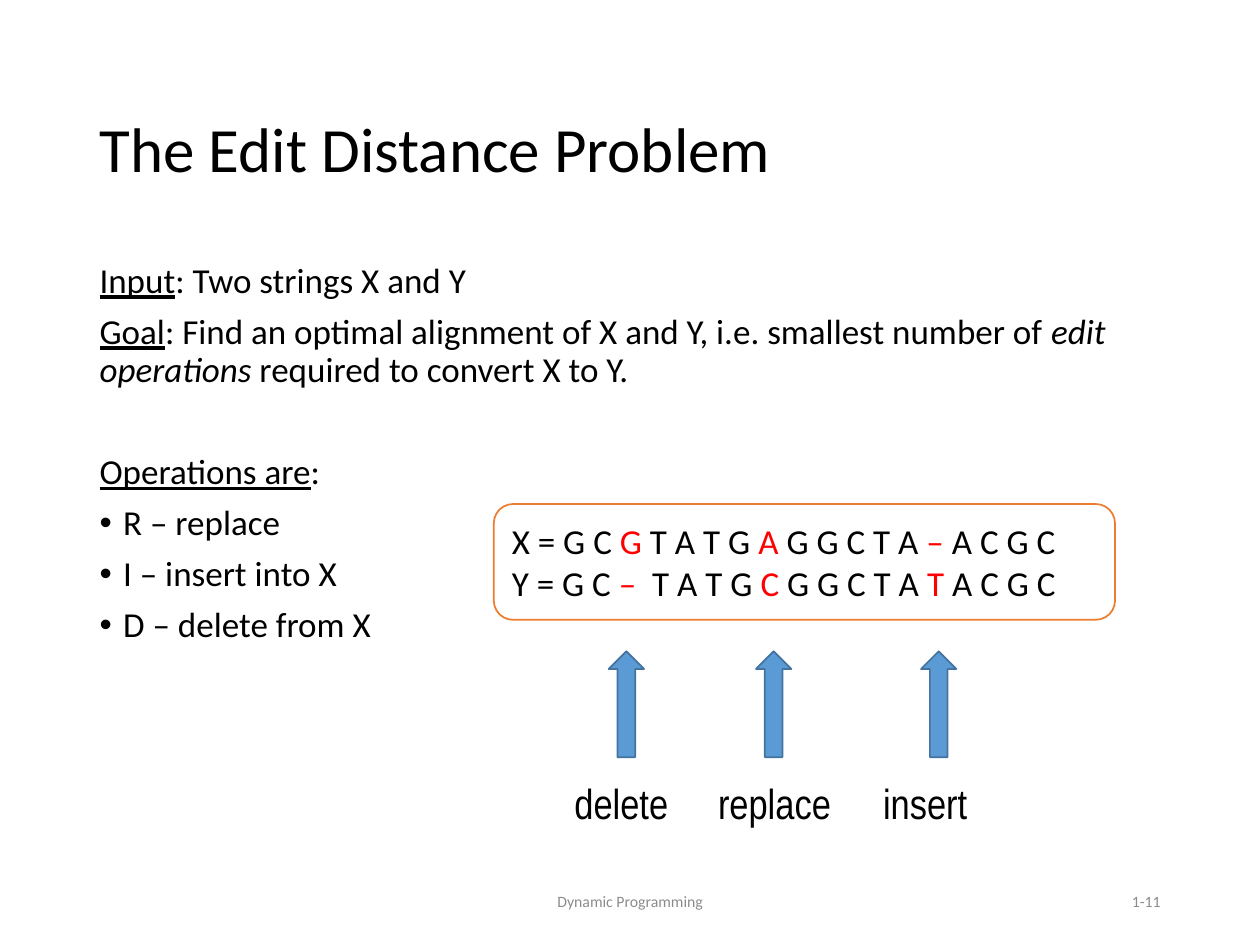
import pptx
import pptx.util
import pptx.dml.color
import pptx.enum.shapes
import pptx.enum.text
import pptx.oxml.ns
from lxml import etree

Pt = pptx.util.Pt
Align = pptx.enum.text.PP_ALIGN
Anchor = pptx.enum.text.MSO_ANCHOR
Fit = pptx.enum.text.MSO_AUTO_SIZE
Shape = pptx.enum.shapes.MSO_SHAPE

# Content: each line is a list of (text, style) pieces
TITLE = "The Edit Distance Problem"
PROBLEM = [
    [("Input", "underline"), (": Two strings X and Y", "")],
    [("Goal", "underline"),
     (": Find an optimal alignment of X and Y, i.e. smallest number of ", ""),
     ("edit operations", "italic"), (" required to convert X to Y.", "")],
    [("Operations are", "underline"), (":", "")],
]
OPERATIONS = ["R – replace", "I – insert into X", "D – delete from X"]
ALIGNMENT = [
    [("X = G C ", ""), ("G", "edit"), (" T A T G ", ""), ("A", "edit"),
     (" G G C T A ", ""), ("–", "edit"), (" A C G C", "")],
    [("Y = G C ", ""), ("– ", "edit"), (" T A T G ", ""), ("C", "edit"),
     (" G G C T A ", ""), ("T", "edit"), (" A C G C", "")],
]
# Label, arrow left, label left, label width
EDITS = [("delete", 347.8, 321.1, 77.8),
         ("replace", 432, 403.2, 95),
         ("insert", 526.3, 497.5, 77.8)]
# Text, left, width, alignment
FOOTERS = [("Dynamic Programming", 238.3, 243.4, Align.CENTER),
           ("1-11", 508.3, 162, Align.RIGHT)]

THEME = {
    "font": "Calibri", "label_font": "Arial Narrow",
    "title": 36, "body": 20, "label": 24, "footer": 9,
    "text": "000000", "edit": "FF0000", "muted": "8C8C8C", "paper": "FFFFFF",
    "box_line": "ED7D31", "arrow": "5B9BD5", "arrow_line": "43739E",
}
LEFT, WIDTH = 49.7, 620.6
PARAGRAPH_GAP, SECTION_GAP = 7.5, 37
BULLET_INDENT = 13.5


def color(name):
    return pptx.dml.color.RGBColor.from_string(THEME[name])


def place(part, left, top, width, height):
    part.left, part.top, part.width, part.height = map(Pt, (left, top, width, height))


def style_run(run, size, ink="text", font="font"):
    run.font.name, run.font.size = THEME[font], Pt(THEME[size])
    run.font.color.rgb = color(ink)


def write_pieces(paragraph, pieces):
    for text, style in pieces:
        run = paragraph.add_run()
        run.text = text
        style_run(run, "body", "edit" if style == "edit" else "text")
        if style == "underline":
            run.font.underline = True
        if style == "italic":
            run.font.italic = True


def next_paragraph(frame, index):
    return frame.add_paragraph() if index else frame.paragraphs[0]


def set_bullet(paragraph, mark, indent):
    properties = paragraph._p.get_or_add_pPr()
    properties.set("marL", str(Pt(indent)))
    properties.set("indent", str(-Pt(indent)))
    tag = "a:buChar" if mark else "a:buNone"
    bullet = etree.SubElement(properties, pptx.oxml.ns.qn(tag))
    if mark:
        bullet.set("char", mark)


def add_label(slide, text, box, size, ink="text", font="font", align=Align.LEFT):
    label = slide.shapes.add_textbox(*map(Pt, box))
    frame = label.text_frame
    frame.word_wrap = True
    frame.text = text
    frame.paragraphs[0].alignment = align
    style_run(frame.paragraphs[0].runs[0], size, ink, font)
    return frame


def add_figure(slide, kind, box, fill, line):
    figure = slide.shapes.add_shape(kind, *map(Pt, box))
    figure.shadow.inherit = False
    figure.fill.solid()
    figure.fill.fore_color.rgb = color(fill)
    figure.line.color.rgb = color(line)
    figure.line.width = Pt(1)
    return figure


def main():
    deck = pptx.Presentation()
    deck.slide_width, deck.slide_height = Pt(720), Pt(540)
    slide = deck.slides.add_slide(deck.slide_layouts[1])
    title, body = slide.placeholders

    # Title
    place(title, LEFT, 28.8, WIDTH, 104.4)
    frame = title.text_frame
    frame.text = TITLE
    frame.auto_size, frame.vertical_anchor = Fit.NONE, Anchor.MIDDLE
    heading = frame.paragraphs[0]
    heading.alignment = Align.LEFT
    heading.line_spacing, heading.space_before = 1.15, Pt(6)
    style_run(heading.runs[0], "title")

    # Problem statement and list of operations
    place(body, LEFT, 146.9, WIDTH, 342.7)
    frame = body.text_frame
    frame.auto_size, frame.vertical_anchor = Fit.NONE, Anchor.TOP
    lines = PROBLEM + [[(operation, "")] for operation in OPERATIONS]
    for index, pieces in enumerate(lines):
        paragraph = next_paragraph(frame, index)
        opens_section = index == len(PROBLEM) - 1
        paragraph.line_spacing = 0.9
        paragraph.space_before = Pt(SECTION_GAP if opens_section else PARAGRAPH_GAP)
        bulleted = index >= len(PROBLEM)
        set_bullet(paragraph, "•" if bulleted else None, BULLET_INDENT if bulleted else 0)
        write_pieces(paragraph, pieces)

    # Aligned strings
    strings = add_figure(slide, Shape.ROUNDED_RECTANGLE, (282.2, 288, 355, 66.2),
                         "paper", "box_line")
    frame = strings.text_frame
    frame.word_wrap, frame.vertical_anchor = True, Anchor.MIDDLE
    for index, pieces in enumerate(ALIGNMENT):
        paragraph = next_paragraph(frame, index)
        paragraph.alignment = Align.LEFT
        write_pieces(paragraph, pieces)

    # Arrows with the edit each one marks
    for name, arrow_left, label_left, label_width in EDITS:
        add_figure(slide, Shape.UP_ARROW, (arrow_left, 372.2, 20.2, 60.5),
                   "arrow", "arrow_line")
        frame = add_label(slide, name, (label_left, 440.6, label_width, 36),
                          "label", font="label_font")
        frame.auto_size = Fit.SHAPE_TO_FIT_TEXT

    # Footer and slide number
    for text, left, width, align in FOOTERS:
        frame = add_label(slide, text, (left, 500.4, width, 28.8),
                          "footer", "muted", align=align)
        frame.vertical_anchor = Anchor.MIDDLE

    deck.save("out.pptx")


if __name__ == "__main__":
    main()
